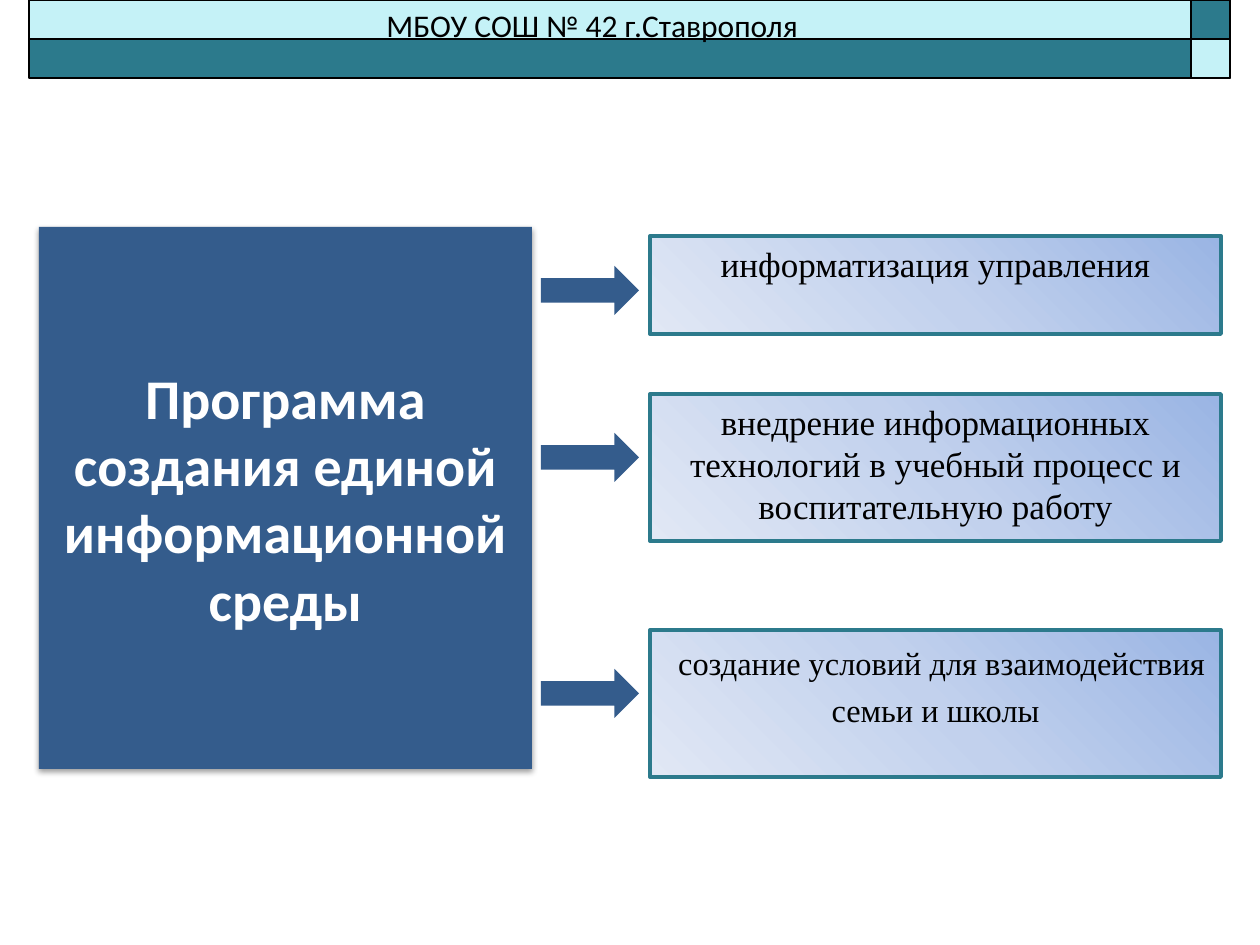
from dataclasses import dataclass

from lxml import etree
from pptx import Presentation
from pptx import util as u
from pptx.dml.color import RGBColor
from pptx.enum import shapes, text
from pptx.oxml import parse_xml
from pptx.oxml.ns import nsdecls, qn

PX_PER_INCH = 126


def px(length):
    return u.Emu(round(length * u.Inches(1) / PX_PER_INCH))


@dataclass(frozen=True)
class Theme:
    navy: str = "345C8C"
    teal: str = "2C7A8C"
    aqua: str = "C5F2F7"
    black: str = "000000"
    white: str = "FFFFFF"
    gradient: tuple = ((0, "9AB5E4"), (50, "C2D1ED"), (100, "E1E8F5"))
    sans: str = "Calibri"
    serif: str = "Times New Roman"
    school_size: float = 18
    program_size: float = 32
    goal_size: float = 20
    small_goal_size: float = 18.5
    lead_size: float = 29.6


class SlideBuilder:
    def __init__(self, slide, theme):
        self.slide = slide
        self.theme = theme

    def block(self, left, top, width, height, fill=None, line=None, weight=0.75,
              kind=shapes.MSO_SHAPE.RECTANGLE):
        block = self.slide.shapes.add_shape(
            kind, px(left), px(top), px(width), px(height))
        block.shadow.inherit = False
        if fill:
            block.fill.solid()
            block.fill.fore_color.rgb = RGBColor.from_string(fill)
        if line:
            block.line.color.rgb = RGBColor.from_string(line)
            block.line.width = u.Pt(weight)
        else:
            block.line.fill.background()
        return block

    def arrow(self, left, top, width, height):
        return self.block(left, top, width, height, self.theme.navy,
                          kind=shapes.MSO_SHAPE.RIGHT_ARROW)

    def goal(self, left, top, width, height):
        """Outlined box whose gradient spreads from the top right corner."""
        goal = self.block(left, top, width, height, line=self.theme.teal, weight=2.25)
        stops = "".join(
            f'<a:gs pos="{pos * 1000}"><a:srgbClr val="{color}"/></a:gs>'
            for pos, color in self.theme.gradient)
        gradient = parse_xml(
            f'<a:gradFill {nsdecls("a")} rotWithShape="1"><a:gsLst>{stops}</a:gsLst>'
            '<a:path path="circle"><a:fillToRect l="100000" b="100000"/></a:path>'
            '</a:gradFill>')
        goal._element.spPr.find(qn("a:prstGeom")).addnext(gradient)
        return goal

    def cast_shadow(self, block):
        effects = block._element.spPr.find(qn("a:effectLst"))
        shadow = etree.SubElement(
            effects, qn("a:outerShdw"), blurRad=str(u.Pt(3.1)), dist=str(u.Pt(1.6)),
            dir="5400000", rotWithShape="0")
        color = etree.SubElement(shadow, qn("a:srgbClr"), val=self.theme.black)
        etree.SubElement(color, qn("a:alpha"), val="38000")

    def add_text(self, block, paragraphs, color, align=text.PP_ALIGN.CENTER,
                 anchor=text.MSO_ANCHOR.TOP, bold=False, spacing=None, gap=0):
        """Each paragraph is a list of (wording, font, size) runs."""
        frame = block.text_frame
        frame.word_wrap = True
        frame.vertical_anchor = anchor
        for index, runs in enumerate(paragraphs):
            paragraph = frame.add_paragraph() if index else frame.paragraphs[0]
            paragraph.alignment = align
            if spacing:
                paragraph.line_spacing = spacing
            if index:
                paragraph.space_before = u.Pt(gap)
            for wording, font, size in runs:
                run = paragraph.add_run()
                run.text = wording
                run.font.name = font
                run.font.size = u.Pt(size)
                run.font.bold = bold
                run.font.color.rgb = RGBColor.from_string(color)

    def label(self, left, top, width, height, wording, font, size):
        label = self.slide.shapes.add_textbox(
            px(left), px(top), px(width), px(height))
        self.add_text(label, [[(wording, font, size)]], self.theme.black,
                      align=text.PP_ALIGN.LEFT)


def main():
    theme = Theme()
    deck = Presentation()
    deck.slide_width, deck.slide_height = u.Inches(10), u.Inches(7.5)
    builder = SlideBuilder(deck.slides.add_slide(deck.slide_layouts[6]), theme)

    # Program on the left
    program = builder.block(39, 227, 493, 542, theme.navy)
    builder.cast_shadow(program)
    builder.add_text(
        program,
        [[("Программа создания единой информационной среды",
           theme.sans, theme.program_size)]],
        theme.white, anchor=text.MSO_ANCHOR.MIDDLE, bold=True)

    # Goals on the right, each with its arrow
    management = [[("информатизация управления", theme.serif, theme.goal_size)]]
    teaching = [[("внедрение информационных технологий в учебный процесс и "
                  "воспитательную работу", theme.serif, theme.goal_size)]]
    family = [
        [(" ", theme.sans, theme.lead_size),
         ("создание условий для взаимодействия", theme.serif, theme.small_goal_size)],
        [("семьи и школы", theme.serif, theme.small_goal_size)],
    ]
    goals = (
        (236, 98, 266, management, None),
        (394, 147, 433, teaching, None),
        (630, 147, 669, family, 0.8),
    )
    for top, height, arrow_top, wording, spacing in goals:
        goal = builder.goal(650, top, 571, height)
        builder.add_text(goal, wording, theme.black, spacing=spacing, gap=6.5)
        builder.arrow(541, arrow_top, 98, 49)

    # Header: two bands, with the colours swapped in the end squares
    band = 39
    for row, (bar, square) in enumerate(
            ((theme.aqua, theme.teal), (theme.teal, theme.aqua))):
        builder.block(29, row * band, 1201, band, bar, theme.black)
        builder.block(1191, row * band, band, band, square, theme.black)
    builder.label(374, 0, 483, 50, "МБОУ СОШ № 42 г.Ставрополя",
                  theme.sans, theme.school_size)

    deck.save("out.pptx")


if __name__ == "__main__":
    main()
